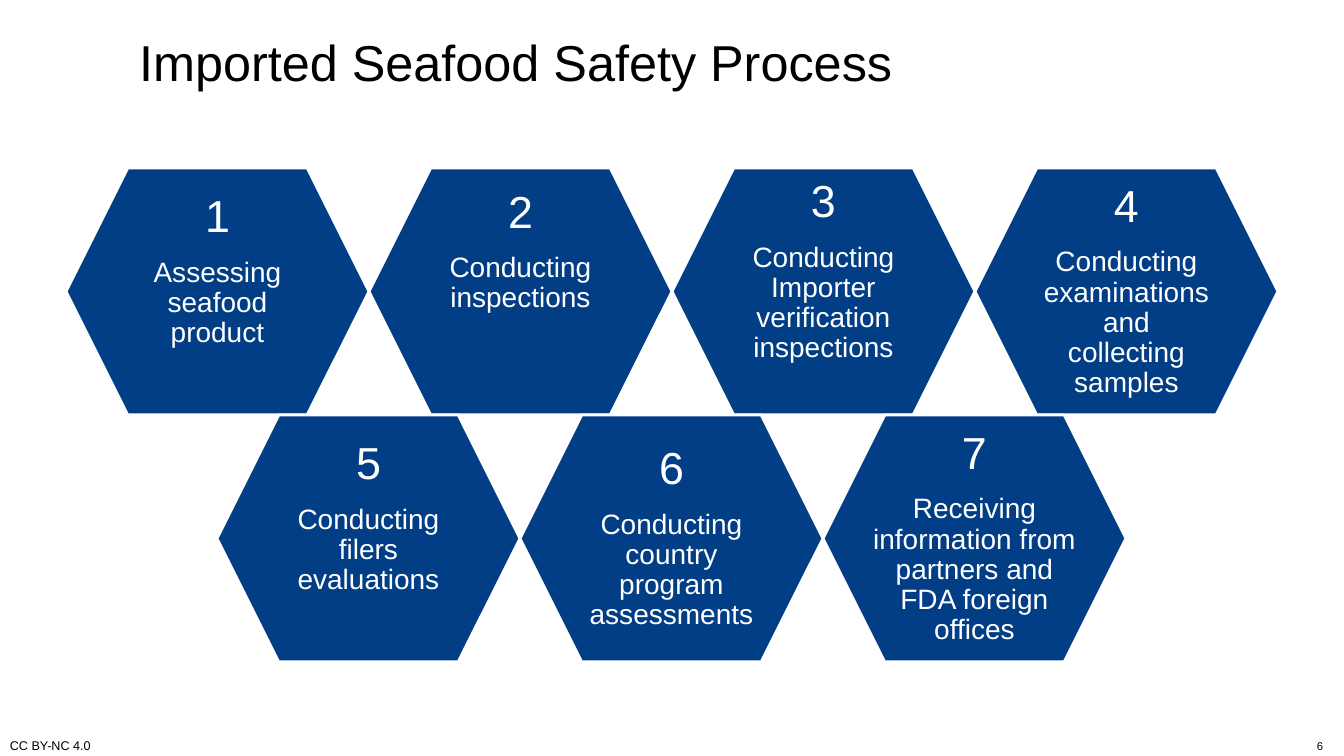
from pptx import Presentation
from pptx.dml.color import RGBColor
from pptx.enum.shapes import MSO_SHAPE
from pptx.enum.text import MSO_ANCHOR, MSO_AUTO_SIZE, PP_ALIGN
from pptx.util import Pt

TITLE = "Imported Seafood Safety Process"
# Each row: left, top, then steps as (text, extra bottom inset, side inset)
ROWS = [
    (66, 168, [
        ("Assessing seafood product", 40, 20),
        ("Conducting inspections", 80, 20),
        ("Conducting Importer verification inspections", 40, 20),
        ("Conducting examinations and collecting samples", 0, 20),
    ]),
    (217, 415, [
        ("Conducting\vfilers evaluations", 40, 20),
        ("Conducting country program assessments", 0, 20),
        ("Receiving information from partners and FDA foreign offices", 0, 0),
    ]),
]
LICENCE = ("CC BY-NC 4.0", 9, PP_ALIGN.LEFT, (0, 737, 279, 21))
PAGE = ("6", 8, PP_ALIGN.RIGHT, (1020, 735, 313, 23))

PX = 9071.43
HEX_W, HEX_H, INSET_V = 303, 247, 22
FONT = "Arial"
BLACK = RGBColor(0x00, 0x00, 0x00)
WHITE = RGBColor(0xFF, 0xFF, 0xFF)
NAVY = RGBColor(0x02, 0x3E, 0x86)
HEXAGON = MSO_SHAPE.HEXAGON
MIDDLE, BOTTOM = MSO_ANCHOR.MIDDLE, MSO_ANCHOR.BOTTOM
NO_FIT = MSO_AUTO_SIZE.NONE
LEFT, CENTER = PP_ALIGN.LEFT, PP_ALIGN.CENTER


def px(n):
    return round(n * PX)


def style(p, size, color, align):
    p.alignment = align
    for r in p.runs:
        r.font.name, r.font.size, r.font.color.rgb = FONT, Pt(size), color


def add_step(slide, number, left, top, text, extra, side):
    sp = slide.shapes.add_shape(HEXAGON, px(left), px(top), px(HEX_W), px(HEX_H))
    sp.shadow.inherit = False
    sp.fill.solid()
    sp.fill.fore_color.rgb = NAVY
    sp.line.color.rgb = WHITE
    sp.line.width = Pt(2)
    tf = sp.text_frame
    tf.word_wrap = True
    tf.vertical_anchor = MIDDLE
    tf.margin_left = tf.margin_right = px(side)
    tf.margin_top, tf.margin_bottom = px(INSET_V), px(INSET_V + extra)
    parts = [(tf.paragraphs[0], str(number), 32, 11), (tf.add_paragraph(), text, 20, 7)]
    for p, words, size, after in parts:
        p.text = words
        p.line_spacing = 0.9
        p.space_after = Pt(after)
        style(p, size, WHITE, CENTER)


def add_footer(slide, text, size, align, box):
    tf = slide.shapes.add_textbox(*map(px, box)).text_frame
    tf.word_wrap = True
    tf.vertical_anchor = BOTTOM
    tf.text = text
    style(tf.paragraphs[0], size, BLACK, align)


def main():
    """Build the seafood safety process slide."""
    prs = Presentation()
    prs.slide_width, prs.slide_height = px(1344), px(756)
    slide = prs.slides.add_slide(prs.slide_layouts[5])
    title = slide.shapes.title
    title.left, title.top, title.width, title.height = map(px, (129, 0, 1159, 122))
    tf = title.text_frame
    tf.text = TITLE
    tf.vertical_anchor = MIDDLE
    tf.auto_size = NO_FIT
    style(tf.paragraphs[0], 36, BLACK, LEFT)

    number = 1
    for left, top, steps in ROWS:
        for col, step in enumerate(steps):
            add_step(slide, number, left + col * HEX_W, top, *step)
            number += 1

    add_footer(slide, *LICENCE)
    add_footer(slide, *PAGE)
    prs.save("out.pptx")


if __name__ == "__main__":
    main()
